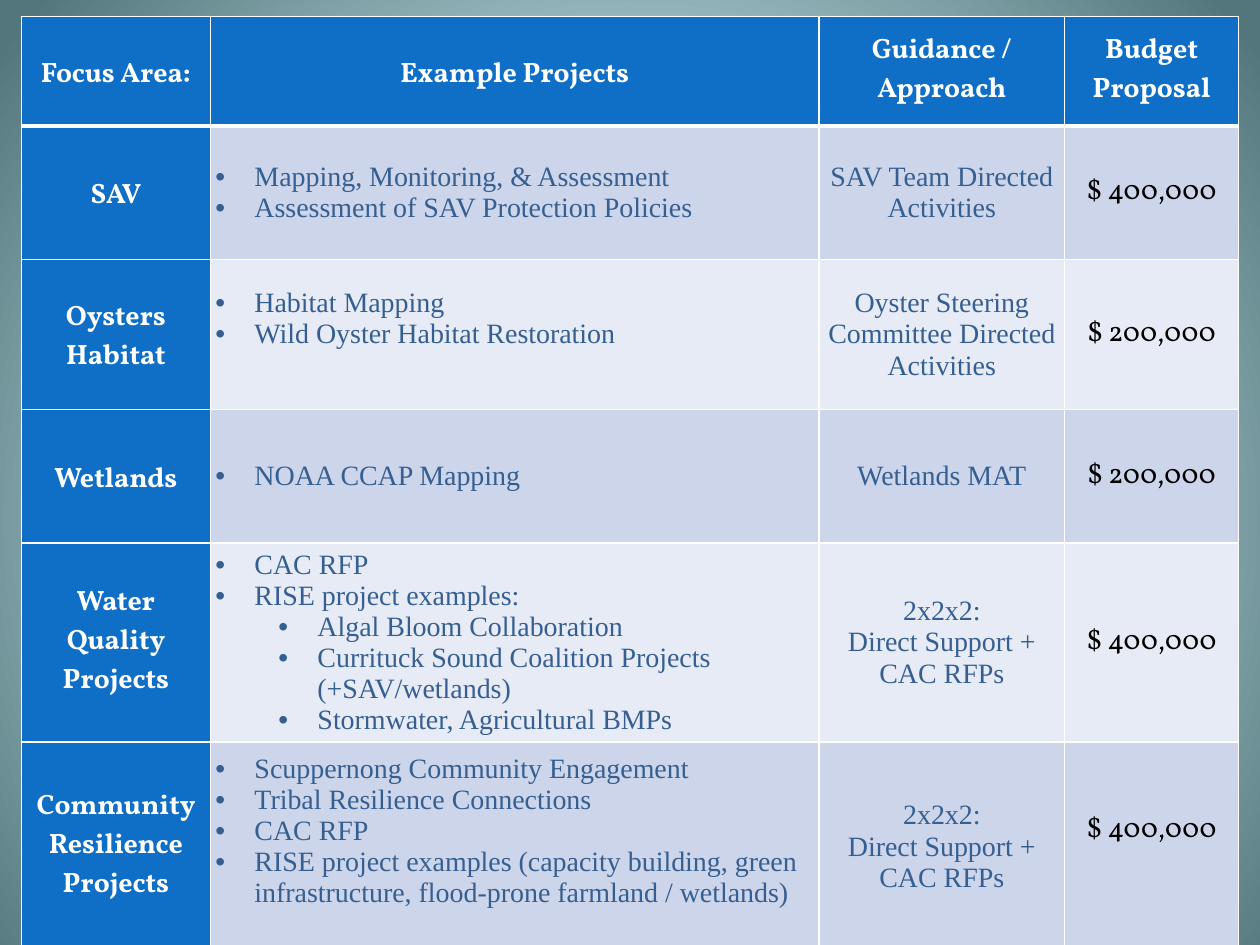
from dataclasses import dataclass

from pptx import Presentation
from pptx.dml.color import RGBColor
from pptx.enum.text import MSO_ANCHOR, PP_ALIGN
from pptx.oxml import parse_xml
from pptx.oxml.ns import nsdecls, qn
from pptx.util import Inches, Pt

CENTER, LEFT = PP_ALIGN.CENTER, PP_ALIGN.LEFT
MIDDLE = MSO_ANCHOR.MIDDLE


@dataclass(frozen=True)
class Theme:
    """Colours, fonts and sizes used on the slide."""
    accent: str = "0F6FC6"
    bands: tuple = ("CCD5EA", "E7EBF5")
    white: str = "FFFFFF"
    black: str = "000000"
    body: str = "365F91"
    backdrop: tuple = ((0, "DEFBFF"), (25, "DDFAFF"), (100, "52767C"))
    heading_font: str = "Vollkorn"
    body_font: str = "Times New Roman"
    size: int = 16
    thin: int = 1
    thick: int = 3


THEME = Theme()
HEADINGS = ("Focus Area:", "Example Projects", "Guidance / Approach", "Budget Proposal")
COLUMN_WIDTHS = (1.5, 4.83, 1.95, 1.38)
ROW_HEIGHTS = (0.87, 1.06, 1.19, 1.06, 1.58, 1.66)
NUDGE_DOWN = {(0, 0), (0, 1), (1, 0), (2, 0), (3, 0)}
NUDGE_UP = {(2, 1), (5, 1), (5, 3)}
SUPPORT = ["2x2x2:", "Direct Support + CAC RFPs"]
FOCUS_AREAS = (
    ("SAV",
     [(0, "Mapping, Monitoring, & Assessment"),
      (0, "Assessment of SAV Protection Policies")],
     ["SAV Team Directed Activities"], "$ 400,000"),
    ("Oysters Habitat",
     [(0, "Habitat Mapping"), (0, "Wild Oyster Habitat Restoration")],
     ["Oyster Steering Committee Directed Activities"], "$ 200,000"),
    ("Wetlands", [(0, "NOAA CCAP Mapping")], ["Wetlands MAT"], "$ 200,000"),
    ("Water Quality Projects",
     [(0, "CAC RFP"),
      (0, "RISE project examples:"),
      (1, "Algal Bloom Collaboration"),
      (1, "Currituck Sound Coalition Projects (+SAV/wetlands)"),
      (1, "Stormwater, Agricultural BMPs")],
     SUPPORT, "$ 400,000"),
    ("Community Resilience Projects",
     [(0, "Scuppernong Community Engagement"),
      (0, "Tribal Resilience Connections"),
      (0, "CAC RFP"),
      (0, "RISE project examples (capacity building, green infrastructure, "
          "flood-prone farmland / wetlands)")],
     SUPPORT, "$ 400,000"),
)


def paint_background(slide):
    """Fill the slide background with a radial gradient."""
    slide.background.fill.gradient()
    linear = slide.element.find(".//" + qn("a:gradFill"))
    stops = "".join(
        f'<a:gs pos="{position * 1000}"><a:srgbClr val="{color}"/></a:gs>'
        for position, color in THEME.backdrop)
    radial = parse_xml(
        f'<a:gradFill {nsdecls("a")} rotWithShape="1"><a:gsLst>{stops}</a:gsLst>'
        '<a:path path="circle"><a:fillToRect l="10000" t="110000" r="10000" b="100000"/>'
        '</a:path></a:gradFill>')
    linear.getparent().replace(linear, radial)


def add_bullet(paragraph, level):
    """Give a paragraph a hanging bullet at the level."""
    paragraph.level = level
    properties = paragraph._p.get_or_add_pPr()
    properties.set("marL", str(Inches(0.31 + 0.5 * level)))
    properties.set("indent", str(Inches(-0.31)))
    for tag, attribute, value in (("buFont", "typeface", "Arial"), ("buChar", "char", "•")):
        properties.append(parse_xml(f'<a:{tag} {nsdecls("a")} {attribute}="{value}"/>'))


def write_text(text_frame, lines, *, font, color, bold=False, align=CENTER, bullets=False):
    """Write lines as paragraphs; bulleted lines are pairs of level and text."""
    for index, line in enumerate(lines):
        paragraph = text_frame.add_paragraph() if index else text_frame.paragraphs[0]
        level, text = line if bullets else (0, line)
        if bullets:
            add_bullet(paragraph, level)
        paragraph.alignment = align
        run = paragraph.add_run()
        run.text = text
        run.font.name = font
        run.font.size = Pt(THEME.size)
        run.font.bold = bold
        run.font.color.rgb = RGBColor.from_string(color)


def style_cell(cell, row, column):
    """Set the fill, margins and borders of a cell by its place."""
    accented = row == 0 or column == 0
    fill = THEME.accent if accented else THEME.bands[(row - 1) % 2]
    cell.fill.solid()
    cell.fill.fore_color.rgb = RGBColor.from_string(fill)
    cell.vertical_anchor = MIDDLE
    cell.margin_left = cell.margin_right = Inches(0.04)
    cell.margin_top = Inches(0.06 if (row, column) in NUDGE_DOWN else 0)
    cell.margin_bottom = Inches(0.25 if (row, column) in NUDGE_UP else 0)
    properties = cell._tc.get_or_add_tcPr()
    for index, side in enumerate("LRTB"):
        heavy = (row, side) in ((0, "B"), (1, "T"))
        width = Pt(THEME.thick if heavy else THEME.thin)
        properties.insert(index, parse_xml(
            f'<a:ln{side} {nsdecls("a")} w="{width}"><a:solidFill>'
            f'<a:srgbClr val="{THEME.white}"/></a:solidFill></a:ln{side}>'))


def add_budget_table(slide, left, top, width, height):
    """Place the table of focus areas, projects, guidance and budgets."""
    table = slide.shapes.add_table(
        len(ROW_HEIGHTS), len(COLUMN_WIDTHS), left, top, width, height).table
    table.horz_banding = False
    for column, share in zip(table.columns, COLUMN_WIDTHS):
        column.width = int(width * share / sum(COLUMN_WIDTHS))
    for row, share in zip(table.rows, ROW_HEIGHTS):
        row.height = int(height * share / sum(ROW_HEIGHTS))

    heading = dict(font=THEME.heading_font, color=THEME.white, bold=True)
    body = dict(font=THEME.body_font, color=THEME.body)
    formats = (heading, dict(body, align=LEFT, bullets=True), body,
               dict(font=THEME.heading_font, color=THEME.black))
    rows = [[([text], heading) for text in HEADINGS]]
    for area, projects, guidance, budget in FOCUS_AREAS:
        rows.append(list(zip(([area], projects, guidance, [budget]), formats)))
    for row, contents in enumerate(rows):
        for column, (lines, text_format) in enumerate(contents):
            cell = table.cell(row, column)
            style_cell(cell, row, column)
            write_text(cell.text_frame, lines, **text_format)


def main():
    """Build and save the presentation."""
    presentation = Presentation()
    presentation.slide_width = Inches(10)
    presentation.slide_height = Inches(7.5)
    slide = presentation.slides.add_slide(presentation.slide_layouts[6])
    paint_background(slide)
    add_budget_table(slide, Inches(0.17), Inches(0.13),
                     Inches(sum(COLUMN_WIDTHS)), Inches(sum(ROW_HEIGHTS)))
    presentation.save("out.pptx")


if __name__ == "__main__":
    main()
